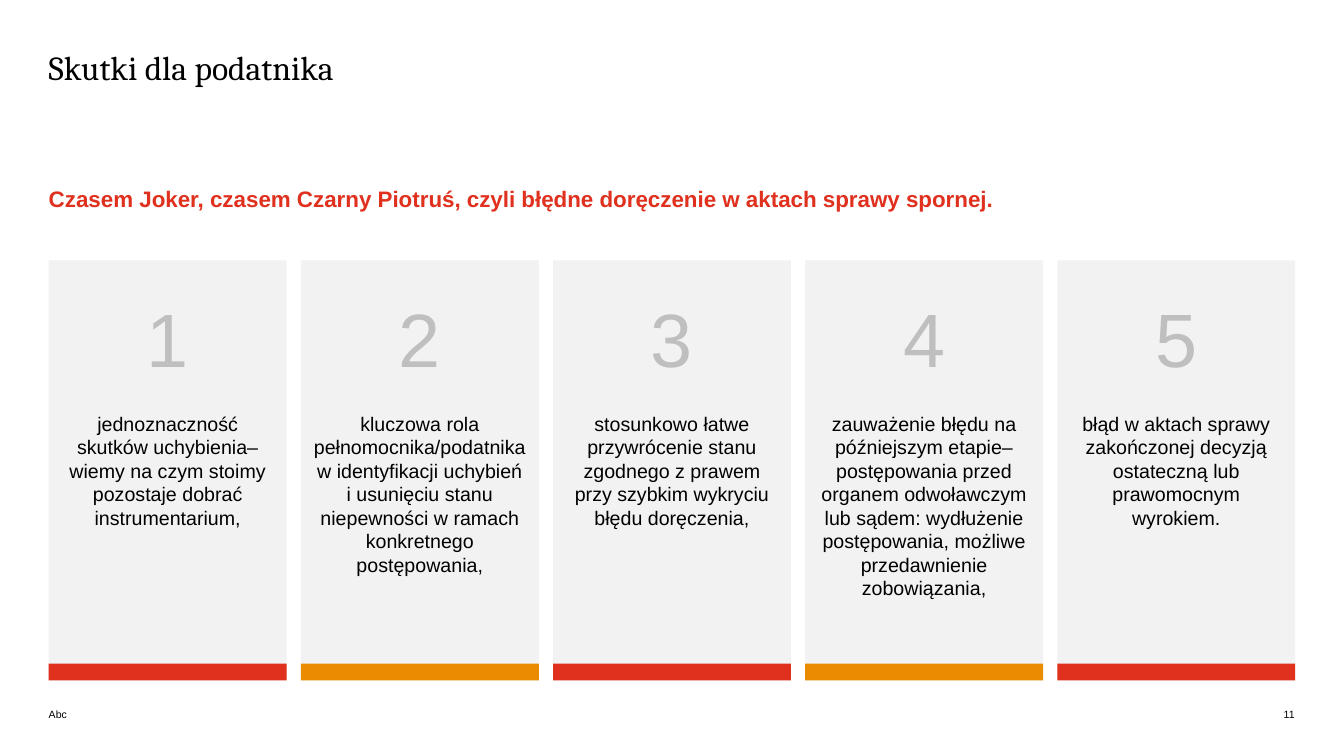
from pptx import Presentation
from pptx.dml.color import RGBColor
from pptx.enum import shapes, text
from pptx.util import Pt

BLACK = RGBColor(0x00, 0x00, 0x00)
RED = RGBColor(0xE0, 0x30, 0x1E)
ORANGE = RGBColor(0xEB, 0x8C, 0x00)
CARD_GREY = RGBColor(0xF2, 0xF2, 0xF2)
NUMBER_GREY = RGBColor(0xBF, 0xBF, 0xBF)

LEFT, CONTENT_WIDTH = 34.8, 890
CARD_TOP, CARD_WIDTH, CARD_HEIGHT, CARD_PITCH = 186, 170, 300, 180.1
BAR_HEIGHT = 12
NUMBER_WIDTH = 37.5

effects = [
    "jednoznaczność skutków uchybienia–wiemy na czym stoimy pozostaje dobrać instrumentarium,",
    "kluczowa rola pełnomocnika/podatnika w identyfikacji uchybień i usunięciu stanu "
    "niepewności w ramach konkretnego postępowania,",
    "stosunkowo łatwe przywrócenie stanu zgodnego z prawem przy szybkim wykryciu "
    "błędu doręczenia,",
    "zauważenie błędu na późniejszym etapie–postępowania przed organem odwoławczym "
    "lub sądem: wydłużenie postępowania, możliwe przedawnienie zobowiązania,",
    "błąd w aktach sprawy zakończonej decyzją ostateczną lub prawomocnym wyrokiem.",
]


def write(holder, wording, size, color=BLACK, font="Arial", bold=False,
          align=text.PP_ALIGN.LEFT, anchor=text.MSO_ANCHOR.TOP, insets=(0, 0, 0, 0)):
    frame = holder.text_frame
    frame.text = wording
    left, top, right, bottom = map(Pt, insets)
    frame_format = {
        "word_wrap": True, "auto_size": text.MSO_AUTO_SIZE.NONE, "vertical_anchor": anchor,
        "margin_left": left, "margin_top": top, "margin_right": right, "margin_bottom": bottom,
    }
    for name, value in frame_format.items():
        setattr(frame, name, value)
    paragraph = frame.paragraphs[0]
    paragraph.alignment = align
    run_font = paragraph.runs[0].font
    for name, value in {"name": font, "size": Pt(size), "bold": bold}.items():
        setattr(run_font, name, value)
    run_font.color.rgb = color


def add_block(left, top, width, height, color):
    block = slide.shapes.add_shape(shapes.MSO_SHAPE.RECTANGLE,
                                   Pt(left), Pt(top), Pt(width), Pt(height))
    block.shadow.inherit = False
    block.fill.solid()
    block.fill.fore_color.rgb = color
    block.line.fill.background()
    return block


prs = Presentation()
prs.slide_width, prs.slide_height = Pt(960), Pt(540)
slide = prs.slides.add_slide(prs.slide_layouts[5])

# Title
title = slide.shapes.title
title_place = {"left": LEFT, "top": 33.8, "width": CONTENT_WIDTH, "height": 39}
for name, value in title_place.items():
    setattr(title, name, Pt(value))
write(title, "Skutki dla podatnika", 24, font="Cambria")

# Lead sentence
lead = slide.shapes.add_textbox(Pt(LEFT), Pt(132), Pt(CONTENT_WIDTH), Pt(19.4))
write(lead, "Czasem Joker, czasem Czarny Piotruś, czyli błędne doręczenie w aktach sprawy spornej.",
      16, RED, bold=True)

# Five numbered cards, each with a coloured bar at its foot
for index, effect in enumerate(effects):
    card_left = LEFT + index * CARD_PITCH
    card = add_block(card_left, CARD_TOP, CARD_WIDTH, CARD_HEIGHT, CARD_GREY)
    write(card, effect, 14, align=text.PP_ALIGN.CENTER, insets=(8.6, 108, 8.6, 8.6))
    card.text_frame.paragraphs[0].space_before = Pt(12)

    number_left = card_left + (CARD_WIDTH - NUMBER_WIDTH) / 2
    number = slide.shapes.add_textbox(Pt(number_left), Pt(208.8), Pt(NUMBER_WIDTH), Pt(65.5))
    write(number, str(index + 1), 54, NUMBER_GREY, align=text.PP_ALIGN.CENTER)

    add_block(card_left, CARD_TOP + CARD_HEIGHT - BAR_HEIGHT, CARD_WIDTH, BAR_HEIGHT,
              ORANGE if index % 2 else RED)

# Footer: firm name and page number
firm = slide.shapes.add_textbox(Pt(LEFT), Pt(504), Pt(24), Pt(10.8))
write(firm, "Abc", 7.5, anchor=text.MSO_ANCHOR.BOTTOM)
page = slide.shapes.add_textbox(Pt(LEFT + CONTENT_WIDTH - 33), Pt(504), Pt(33), Pt(10.8))
write(page, "11", 7.5, align=text.PP_ALIGN.RIGHT, anchor=text.MSO_ANCHOR.BOTTOM)

prs.save("out.pptx")
